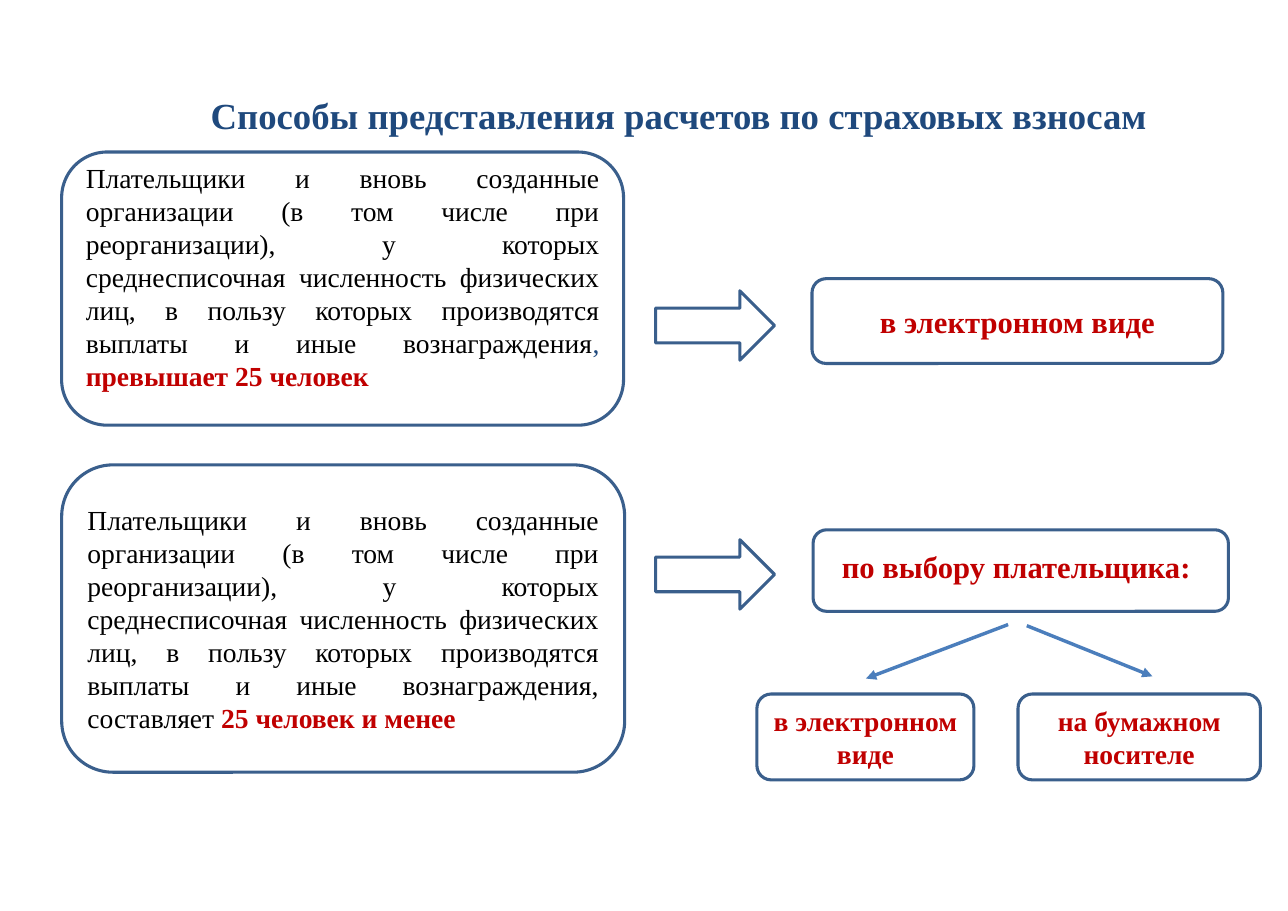
from pptx import Presentation
from pptx.dml.color import RGBColor
from pptx.enum.shapes import MSO_CONNECTOR, MSO_SHAPE
from pptx.enum.text import MSO_ANCHOR, MSO_AUTO_SIZE, PP_ALIGN
from pptx.oxml.ns import qn
from pptx.util import Inches, Pt
from lxml import etree

ROUNDED = MSO_SHAPE.ROUNDED_RECTANGLE
RIGHT_ARROW = MSO_SHAPE.RIGHT_ARROW
STRAIGHT = MSO_CONNECTOR.STRAIGHT
MIDDLE = MSO_ANCHOR.MIDDLE
NO_AUTOFIT = MSO_AUTO_SIZE.NONE
CENTER = PP_ALIGN.CENTER
JUSTIFY = PP_ALIGN.JUSTIFY

FONT = "Times New Roman"
NAVY = RGBColor(0x1F, 0x49, 0x7D)
OUTLINE = RGBColor(0x3A, 0x5F, 0x8C)
BRANCH = RGBColor(0x4B, 0x7E, 0xBC)
RED = RGBColor(0xC0, 0x00, 0x00)
BLACK = RGBColor(0x00, 0x00, 0x00)

PAYERS = (
    "Плательщики и вновь созданные организации (в том числе при реорганизации), "
    "у которых среднесписочная численность физических лиц, в пользу которых "
    "производятся выплаты и иные вознаграждения"
)


def style_run(run, size, color, bold):
    run.font.name = FONT
    run.font.size = Pt(size)
    run.font.color.rgb = color
    run.font.bold = bold


def add_title(slide, text):
    title = slide.shapes.title
    title.left, title.top = Inches(1.47), Inches(0.24)
    title.width, title.height = Inches(9.38), Inches(1.28)
    frame = title.text_frame
    frame.text = text
    frame.auto_size = NO_AUTOFIT
    frame.vertical_anchor = MIDDLE
    heading = frame.paragraphs[0]
    heading.alignment = CENTER
    heading.line_spacing = Pt(52)
    style_run(heading.runs[0], 24, NAVY, True)


def add_outlined(slide, preset, left, top, width, height):
    outlined = slide.shapes.add_shape(
        preset, Inches(left), Inches(top), Inches(width), Inches(height))
    outlined.shadow.inherit = False
    outlined.fill.background()
    outlined.line.color.rgb = OUTLINE
    outlined.line.width = Pt(2)
    return outlined


def add_card(slide, box, parts, size, align, right=0.1, bottom=0.05):
    frame = add_outlined(slide, ROUNDED, *box).text_frame
    frame.word_wrap = True
    frame.vertical_anchor = MIDDLE
    frame.margin_right = Inches(right)
    frame.margin_bottom = Inches(bottom)
    paragraph = frame.paragraphs[0]
    paragraph.alignment = align
    for text, color in parts:
        run = paragraph.add_run()
        run.text = text
        style_run(run, size, color, color == RED)


def add_branch(slide, x1, y1, x2, y2):
    branch = slide.shapes.add_connector(
        STRAIGHT, Inches(x1), Inches(y1), Inches(x2), Inches(y2))
    branch.line.color.rgb = BRANCH
    branch.line.width = Pt(2.25)
    etree.SubElement(branch.line._get_or_add_ln(), qn("a:tailEnd"), type="triangle")
    etree.SubElement(branch._element.spPr, qn("a:effectLst"))


def main():
    prs = Presentation()
    prs.slide_width, prs.slide_height = Inches(11.69), Inches(8.27)
    slide = prs.slides.add_slide(prs.slide_layouts[5])

    add_title(slide, "Способы представления расчетов по страховых взносам")

    over_25 = [(PAYERS, BLACK), (", ", NAVY), ("превышает 25 человек", RED)]
    up_to_25 = [(PAYERS + ", составляет ", BLACK), ("25 человек и менее", RED)]
    add_card(slide, (0.56, 1.38, 5.1, 2.48), over_25, 18, JUSTIFY, bottom=0.27)
    add_card(slide, (0.56, 4.22, 5.11, 2.79), up_to_25, 18, JUSTIFY)

    for arrow_top in (2.64, 4.9):
        add_outlined(slide, RIGHT_ARROW, 5.95, arrow_top, 1.08, 0.63)

    electronic = [("в электронном виде", RED)]
    payer_choice = [("по выбору плательщика:", RED)]
    paper = [("на бумажном носителе", RED)]
    add_card(slide, (7.37, 2.53, 3.73, 0.77), electronic, 20, CENTER)
    add_card(slide, (7.38, 4.81, 3.77, 0.74), payer_choice, 20, CENTER,
             right=0.18, bottom=0.13)
    add_card(slide, (6.87, 6.3, 1.97, 0.78), electronic, 18, CENTER)
    add_card(slide, (9.24, 6.3, 2.2, 0.78), paper, 18, CENTER)

    add_branch(slide, 9.15, 5.67, 7.86, 6.16)
    add_branch(slide, 9.32, 5.68, 10.46, 6.14)

    prs.save("out.pptx")


if __name__ == "__main__":
    main()
